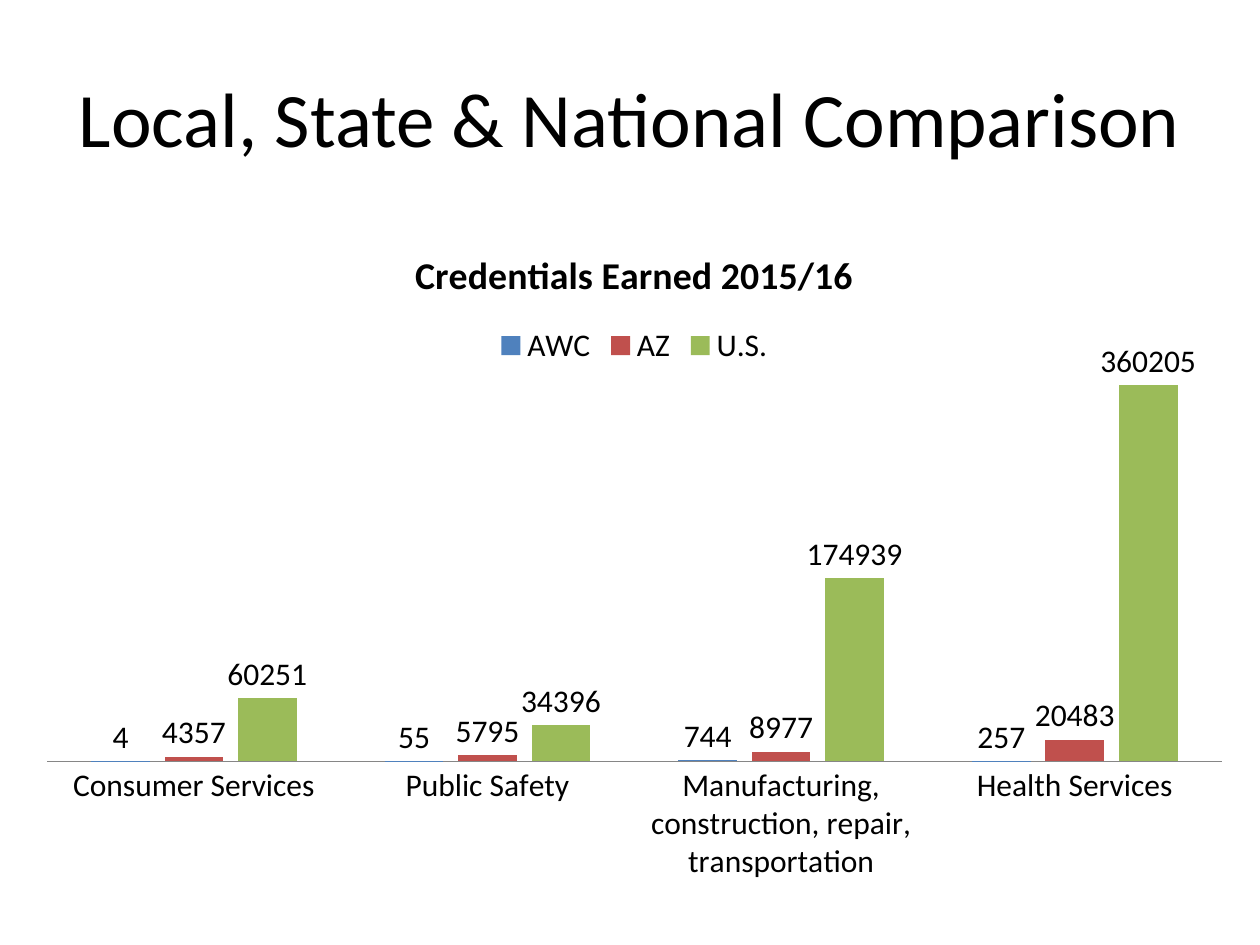
from lxml.etree import SubElement
from pptx import Presentation
from pptx.chart.data import CategoryChartData
from pptx.dml.color import RGBColor
from pptx.enum.chart import XL_CHART_TYPE, XL_LABEL_POSITION, XL_LEGEND_POSITION, XL_TICK_MARK
from pptx.enum.text import MSO_ANCHOR, PP_ALIGN
from pptx.oxml.ns import qn
from pptx.util import Inches, Pt

FONT = "Calibri"
BLACK = "000000"
TITLE = "Local, State & National Comparison"
CHART_TITLE = "Credentials Earned 2015/16"
CATEGORIES = [
    "Consumer Services",
    "Public Safety",
    "Manufacturing, construction, repair, transportation",
    "Health Services",
]
SERIES = [
    ("AWC", "4F81BD", (4, 55, 744, 257)),
    ("AZ", "C0504D", (4357, 5795, 8977, 20483)),
    ("U.S.", "9BBB59", (60251, 34396, 174939, 360205)),
]
PLOT_LAYOUT = [
    ("layoutTarget", "inner"),
    ("xMode", "edge"),
    ("yMode", "edge"),
    ("x", "0.016"),
    ("y", "0.177"),
    ("w", "0.968"),
    ("h", "0.602"),
]


def color(value):
    return RGBColor.from_string(value)


def style_font(font, size, bold=False):
    font.name = FONT
    font.size = Pt(size)
    font.bold = bold
    font.color.rgb = color(BLACK)


def add_title(page):
    box = page.shapes.add_textbox(Inches(0.5), Inches(0.3), Inches(9), Inches(1.25))
    frame = box.text_frame
    frame.word_wrap = True
    frame.vertical_anchor = MSO_ANCHOR.MIDDLE
    para = frame.paragraphs[0]
    para.alignment = PP_ALIGN.CENTER
    span = para.add_run()
    span.text = TITLE
    style_font(span.font, 44)


def set_plot_layout(chart):
    plot_area = chart._chartSpace.chart.plotArea
    layout = plot_area.find(qn("c:layout"))
    if layout is None:
        layout = SubElement(plot_area, qn("c:layout"))
        plot_area.insert(0, layout)
    manual = SubElement(layout, qn("c:manualLayout"))
    for name, value in PLOT_LAYOUT:
        SubElement(manual, qn(f"c:{name}")).set("val", value)


def add_credentials_chart(page):
    data = CategoryChartData(number_format="General")
    data.categories = CATEGORIES
    for name, _, values in SERIES:
        data.add_series(name, values)
    chart = page.shapes.add_chart(
        XL_CHART_TYPE.COLUMN_CLUSTERED,
        Inches(0.22), Inches(1.75), Inches(9.63), Inches(5.51), data,
    ).chart
    style_font(chart.font, 18)

    chart.has_title = True
    span = chart.chart_title.text_frame.paragraphs[0].add_run()
    span.text = CHART_TITLE
    style_font(span.font, 21.6, bold=True)
    chart.chart_title.include_in_layout = False

    chart.has_legend = True
    chart.legend.position = XL_LEGEND_POSITION.TOP
    chart.legend.include_in_layout = False

    chart.value_axis.visible = False
    chart.value_axis.has_major_gridlines = False
    chart.value_axis.minimum_scale = 0
    chart.value_axis.maximum_scale = 400000
    chart.category_axis.major_tick_mark = XL_TICK_MARK.NONE
    chart.category_axis.format.line.color.rgb = color("868686")

    plot = chart.plots[0]
    plot.gap_width = 150
    plot.overlap = -25
    plot.vary_by_categories = False
    for series, (_, fill, _) in zip(plot.series, SERIES):
        series.format.fill.solid()
        series.format.fill.fore_color.rgb = color(fill)
        series.invert_if_negative = False
        labels = series.data_labels
        labels.show_value = True
        labels.number_format = "0"
        labels.number_format_is_linked = False
        labels.position = XL_LABEL_POSITION.OUTSIDE_END
    set_plot_layout(chart)


def main():
    deck = Presentation()
    deck.slide_width = Inches(10)
    deck.slide_height = Inches(7.5)
    page = deck.slides.add_slide(deck.slide_layouts[6])
    add_title(page)
    add_credentials_chart(page)
    deck.save("out.pptx")


if __name__ == "__main__":
    main()
